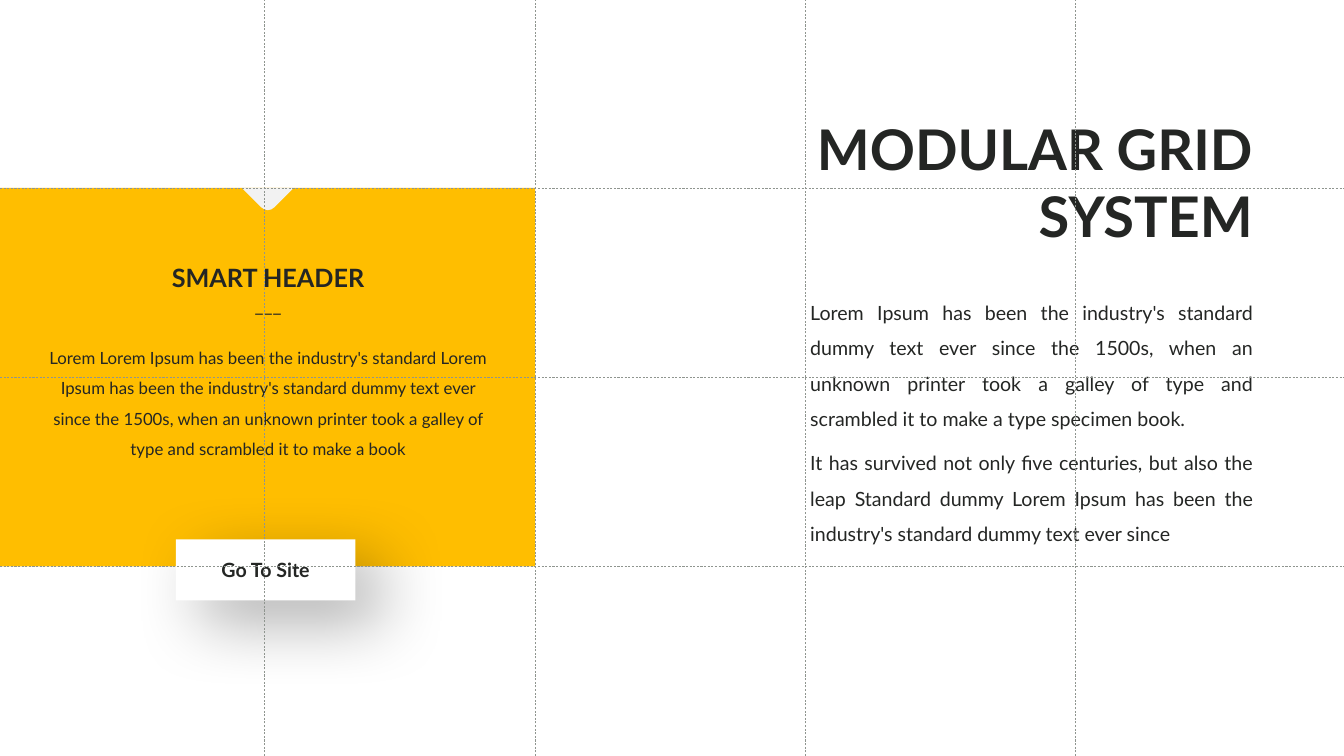
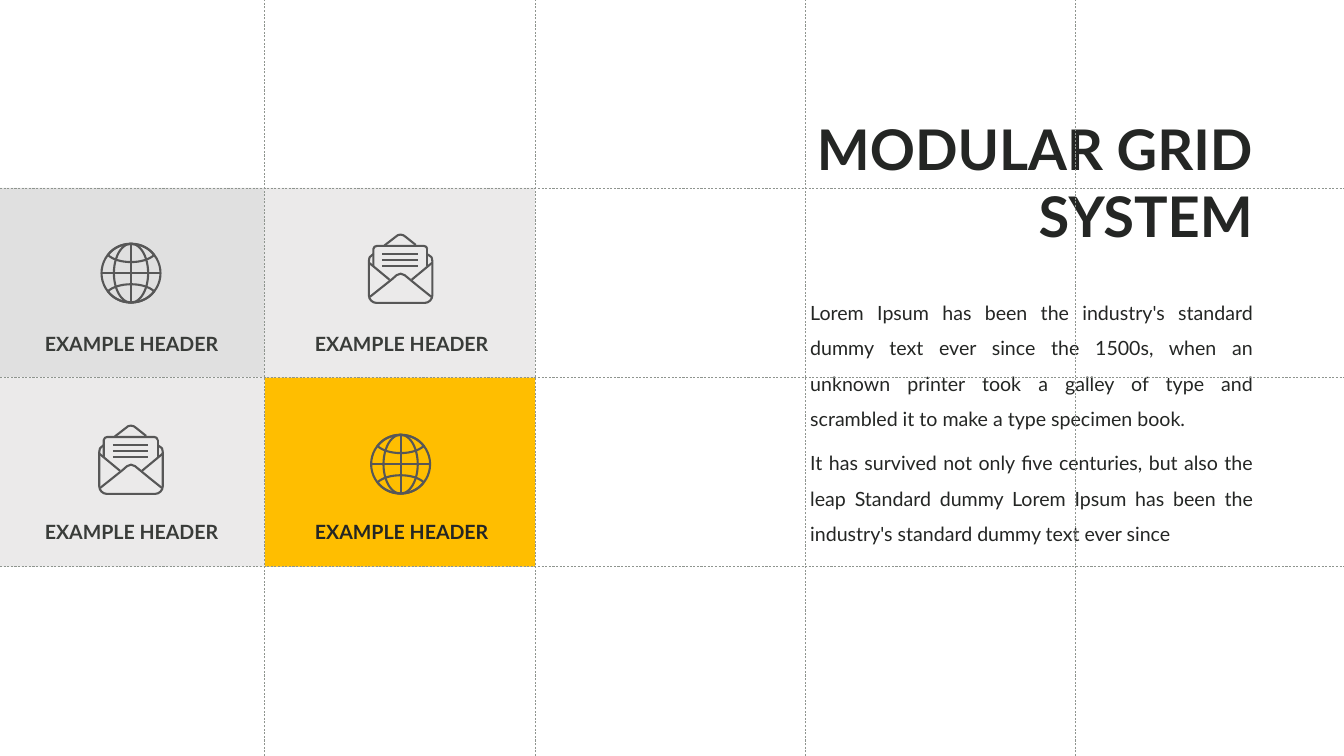
from dataclasses import dataclass
from typing import Callable

from lxml import etree
from pptx import Presentation
from pptx.dml.color import RGBColor
from pptx.enum.dml import MSO_LINE
from pptx.enum.shapes import MSO_CONNECTOR, MSO_SHAPE
from pptx.enum.text import MSO_ANCHOR, PP_ALIGN
from pptx.oxml.ns import qn
from pptx.util import Inches, Pt

CENTER, RIGHT, JUSTIFY = PP_ALIGN.CENTER, PP_ALIGN.RIGHT, PP_ALIGN.JUSTIFY
TOP, MIDDLE = MSO_ANCHOR.TOP, MSO_ANCHOR.MIDDLE
TILE, OVAL, STRAIGHT = MSO_SHAPE.ROUNDED_RECTANGLE, MSO_SHAPE.OVAL, MSO_CONNECTOR.STRAIGHT
DASH = MSO_LINE.DASH

FONT = "Lato"
COLORS = {
    "ink": "242624", "soft ink": "393C39", "accent": "FFBE00", "white": "FFFFFF",
    "light": "EBEAEA", "mid": "E0E0E0", "notch": "F2F2F2", "icon": "575757",
    "grid": "8F958F", "shadow": "000000",
}

# Modular grid, in inches; column 0 starts at the slide's edge
SLIDE_WIDTH, SLIDE_HEIGHT = 26.67, 15
COLUMNS = (0, 5.25, 10.62, 15.98, 21.34)
ROWS = (3.73, 7.49, 11.24)


@dataclass
class Box:
    left: float
    top: float
    width: float
    height: float

    def emu(self) -> tuple:
        return tuple(Inches(v) for v in (self.left, self.top, self.width, self.height))


@dataclass
class Para:
    text: str
    size: float
    align: int = CENTER
    bold: bool = False
    color: str = "ink"
    spacing: float = 1.0
    before: float = 0


@dataclass
class Module:
    column: int
    row: int
    fill: str
    ink: str
    icon: Callable


TITLE = Para("MODULAR GRID SYSTEM", 80, RIGHT, bold=True)
BODY = [
    Para(text, 28, JUSTIFY, spacing=1.5, before=12.7)
    for text in (
        "Lorem Ipsum has been the industry's standard dummy text ever since the 1500s, "
        "when an unknown printer took a galley of type and scrambled it to make a type "
        "specimen book.",
        "It has survived not only five centuries, but also the leap Standard dummy Lorem "
        "Ipsum has been the industry's standard dummy text ever since",
    )
]
CARD_TEXT = [
    Para("SMART HEADER", 36, bold=True, spacing=1.5),
    Para("___", 28),
    Para("Lorem Lorem Ipsum has been the industry's standard Lorem Ipsum has been the "
         "industry's standard dummy text ever since the 1500s, when an unknown printer "
         "took a galley of type and scrambled it to make a book",
         24, spacing=1.5, before=30.5),
]

# Outlines: a pair is a corner, six numbers are a Bezier curve.
# Icon outlines are measured from the icon's centre.
NOTCH = [(4.8, 3.73), (5.83, 3.73), (5.45, 4.11), (5.37, 4.19, 5.26, 4.19, 5.18, 4.11)]
GLOBE_CAP = [
    (-0.46, -0.36), (-0.36, -0.27, -0.19, -0.22, 0, -0.22),
    (0.19, -0.22, 0.36, -0.27, 0.46, -0.36), (0.36, -0.5, 0.19, -0.58, 0, -0.58),
    (-0.19, -0.58, -0.36, -0.5, -0.46, -0.36),
]
ENVELOPE_BODY = [
    (0.54, -0.37), (0.61, -0.32), (0.61, -0.32, 0.63, -0.29, 0.63, -0.24), (0.63, 0.44),
    (0.63, 0.52, 0.56, 0.59, 0.48, 0.59), (-0.48, 0.59),
    (-0.56, 0.59, -0.63, 0.52, -0.63, 0.44), (-0.63, -0.24),
    (-0.63, -0.29, -0.61, -0.32, -0.61, -0.32), (-0.54, -0.38),
]
ENVELOPE_FLAP = [(-0.32, -0.55), (-0.1, -0.72), (-0.05, -0.78, 0.04, -0.78, 0.1, -0.72),
                 (0.3, -0.56)]
ENVELOPE_SHEET = [(-0.54, -0.13), (-0.54, -0.48), (-0.54, -0.52, -0.5, -0.54, -0.47, -0.54),
                  (0.46, -0.54), (0.49, -0.54, 0.53, -0.52, 0.53, -0.48)]
ENVELOPE_FRONT = [(0.61, 0.47), (0.36, 0.27), (0.08, 0.04), (0.03, 0, -0.03, 0, -0.08, 0.04),
                  (-0.17, 0.12), (-0.61, 0.47)]
ENVELOPE_LINES = [
    (0.63, -0.21, 0.22, 0.13), (-0.63, -0.21, -0.22, 0.13), (0.53, -0.48, 0.53, -0.14),
    *[(-0.36, y, 0.34, y) for y in (-0.38, -0.26, -0.15)],
]


def rgb(name: str) -> RGBColor:
    return RGBColor.from_string(COLORS[name])


def paint(shape, fill: str = "", line: str = "") -> None:
    shape.shadow.inherit = False
    if fill:
        shape.fill.solid()
        shape.fill.fore_color.rgb = rgb(fill)
    else:
        shape.fill.background()
    if line:
        shape.line.color.rgb = rgb(line)
        shape.line.width = Pt(3)
    else:
        shape.line.fill.background()


def write(shape, paras: list[Para], anchor=TOP) -> None:
    frame = shape.text_frame
    frame.word_wrap = True
    frame.vertical_anchor = anchor
    frame.text = "\n".join(para.text for para in paras)
    for target, para in zip(frame.paragraphs, paras):
        target.alignment = para.align
        target.line_spacing = para.spacing
        target.space_before = Pt(para.before)
        font = target.runs[0].font
        font.name, font.size, font.bold = FONT, Pt(para.size), para.bold
        font.color.rgb = rgb(para.color)


def add_text(shapes, box: Box, paras: list[Para]) -> None:
    write(shapes.add_textbox(*box.emu()), paras)


def add_tile(shapes, box: Box, fill: str):
    tile = shapes.add_shape(TILE, *box.emu())
    tile.adjustments[0] = 0
    paint(tile, fill)
    return tile


def add_line(shapes, ends: tuple, color: str, width: float):
    line = shapes.add_connector(STRAIGHT, *(Inches(end) for end in ends))
    line.line.color.rgb = rgb(color)
    line.line.width = Pt(width)
    etree.SubElement(line._element.spPr, qn("a:effectLst"))
    return line


def bend(shape, outline: list[tuple]) -> None:
    """Turn each three segments that stand for a curve into one Bezier curve."""
    segments = iter(list(shape._element.iter(qn("a:lnTo"))))
    for part in outline[1:]:
        first = next(segments)
        if len(part) == 2:
            continue
        curve = etree.Element(qn("a:cubicBezTo"))
        first.addprevious(curve)
        for segment in (first, next(segments), next(segments)):
            curve.append(segment[0])
            segment.getparent().remove(segment)


def add_outline(shapes, outline: list[tuple], x: float = 0, y: float = 0, flip: int = 1,
                closed: bool = False, fill: str = "", line: str = "") -> None:
    points = [(Inches(x + part[i]), Inches(y + flip * part[i + 1]))
              for part in outline for i in range(0, len(part), 2)]
    builder = shapes.build_freeform(*points[0])
    builder.add_line_segments(points[1:], close=closed)
    shape = builder.convert_to_shape()
    bend(shape, outline)
    paint(shape, fill, line)


def add_icon_line(shapes, x: float, y: float, ends: tuple) -> None:
    x1, y1, x2, y2 = ends
    add_line(shapes, (x + x1, y + y1, x + x2, y + y2), "icon", 3)


def draw_globe(shapes, x: float, y: float) -> None:
    height = 1.17
    for width in (height, 0.68):
        box = Box(x - width / 2, y - height / 2, width, height)
        paint(shapes.add_shape(OVAL, *box.emu()), line="icon")
    for ends in ((0, -0.57, 0, 0.57), (-0.57, 0, 0.57, 0)):
        add_icon_line(shapes, x, y, ends)
    for flip in (1, -1):
        add_outline(shapes, GLOBE_CAP, x, y, flip, closed=True, line="icon")


def draw_envelope(shapes, x: float, y: float) -> None:
    for outline in (ENVELOPE_BODY, ENVELOPE_FLAP, ENVELOPE_SHEET, ENVELOPE_FRONT):
        add_outline(shapes, outline, x, y, line="icon")
    for ends in ENVELOPE_LINES:
        add_icon_line(shapes, x, y, ends)


MODULES = [
    Module(1, 0, "light", "soft ink", draw_envelope),
    Module(1, 1, "accent", "ink", draw_globe),
    Module(0, 0, "mid", "soft ink", draw_globe),
    Module(0, 1, "light", "soft ink", draw_envelope),
]


def draw_module(slide, module: Module) -> None:
    shapes = slide.shapes.add_group_shape().shapes
    column, row = module.column, module.row
    left, top = COLUMNS[column], ROWS[row]
    add_tile(shapes, Box(left, top, COLUMNS[column + 1] - left, ROWS[row + 1] - top),
             module.fill)
    module.icon(shapes, 2.6 + 5.35 * column, 5.42 + 3.79 * row)
    add_text(shapes, Box(0.56 + 5.36 * column, 6.3 + 3.74 * row, 4.1, 0.71),
             [Para("EXAMPLE HEADER", 28, bold=True, color=module.ink, spacing=1.5,
                   before=12.7)])


def draw_card(slide) -> None:
    shapes = slide.shapes.add_group_shape().shapes
    add_tile(shapes, Box(0, ROWS[0], COLUMNS[2], ROWS[2] - ROWS[0]), "accent")
    add_text(shapes, Box(0.78, 4.86, 9.08, 4.26), CARD_TEXT)
    add_outline(shapes, NOTCH, closed=True, fill="notch")


def draw_button(slide) -> None:
    button = add_tile(slide.shapes, Box(3.49, 10.7, 3.56, 1.21), "white")
    write(button, [Para("Go To Site", 28, bold=True)], MIDDLE)
    # Soft shadow below and to the right
    effects = button._element.spPr.find(qn("a:effectLst"))
    shadow = etree.SubElement(effects, qn("a:outerShdw"), blurRad=str(Pt(100)),
                              dist=str(Pt(48)), dir=str(40 * 60000), algn="tl",
                              rotWithShape="0")
    color = etree.SubElement(shadow, qn("a:srgbClr"), val=COLORS["shadow"])
    etree.SubElement(color, qn("a:alpha"), val="32000")


def draw_copy_and_grid(slide) -> None:
    """Title, body and grid lines, shared by both slides."""
    left = COLUMNS[3]
    add_text(slide.shapes, Box(left, 2.22, 8.98, 2.91), [TITLE])
    add_text(slide.shapes, Box(left, 5.69, 8.98, 5.56), BODY)
    shapes = slide.shapes.add_group_shape().shapes
    across = [(0, y, SLIDE_WIDTH, y) for y in ROWS]
    down = [(x, SLIDE_HEIGHT, x, 0) for x in COLUMNS[1:]]
    for ends in across + down:
        add_line(shapes, ends, "grid", 0.75).line.dash_style = DASH


def main() -> None:
    deck = Presentation()
    deck.slide_width, deck.slide_height = Inches(SLIDE_WIDTH), Inches(SLIDE_HEIGHT)
    blank = deck.slide_layouts[6]

    # Slide 1: feature card
    card_slide = deck.slides.add_slide(blank)
    draw_card(card_slide)
    draw_button(card_slide)
    draw_copy_and_grid(card_slide)

    # Slide 2: four modules
    module_slide = deck.slides.add_slide(blank)
    for module in MODULES:
        draw_module(module_slide, module)
    draw_copy_and_grid(module_slide)

    deck.save("out.pptx")


if __name__ == "__main__":
    main()
